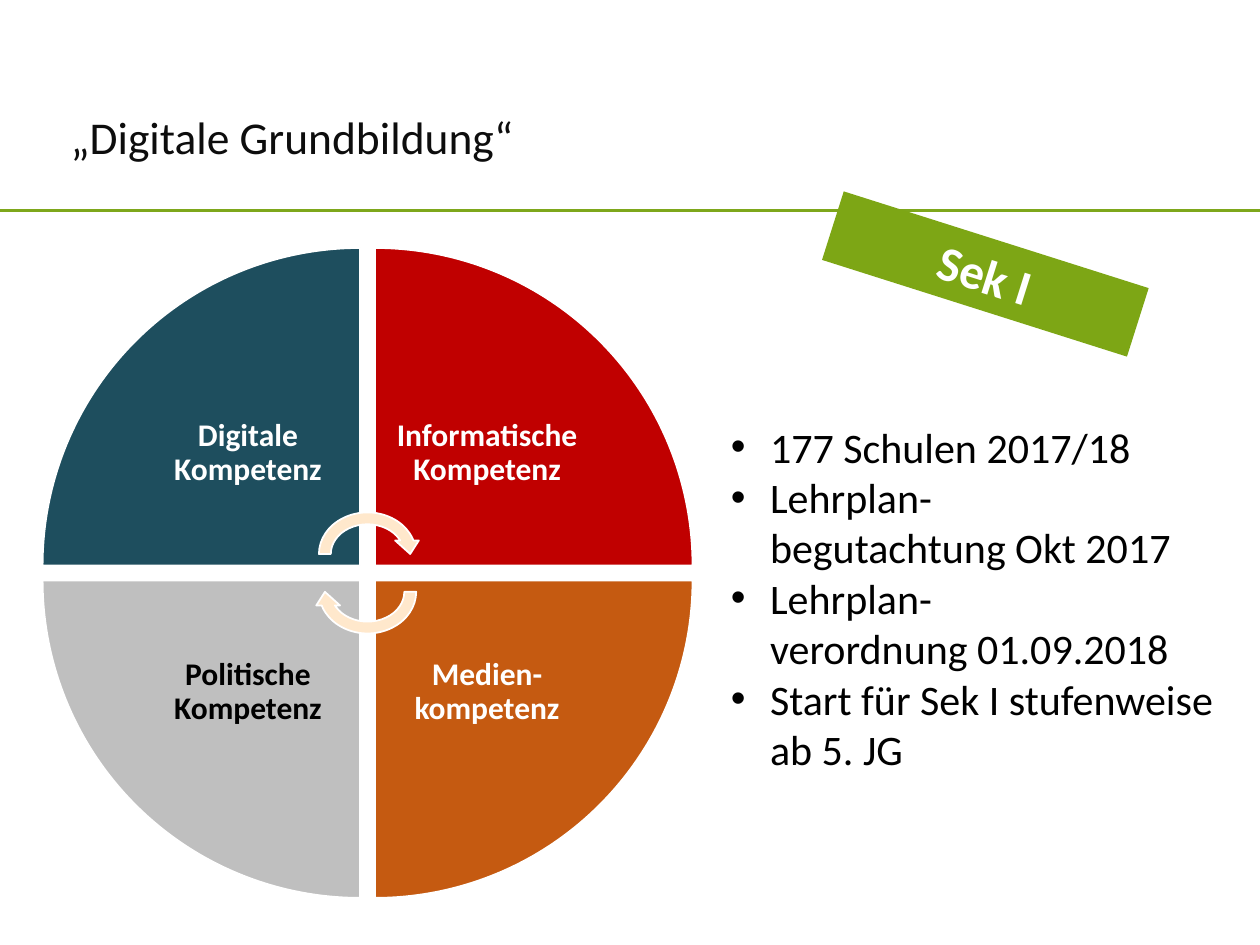
from lxml.etree import SubElement
from pptx import Presentation
from pptx.dml.color import RGBColor
from pptx.enum.shapes import MSO_CONNECTOR, MSO_SHAPE
from pptx.enum.text import MSO_ANCHOR, MSO_AUTO_SIZE, PP_ALIGN
from pptx.oxml.ns import qn
from pptx.util import Cm, Pt

FONT = "Calibri"
WHITE = RGBColor(0xFF, 0xFF, 0xFF)
BLACK = RGBColor(0x00, 0x00, 0x00)
TITLE_INK = RGBColor(0x0D, 0x0D, 0x0D)
RULE_GREEN = RGBColor(0x7E, 0xA7, 0x1B)
BADGE_GREEN = RGBColor(0x7D, 0xA6, 0x15)
PETROL = RGBColor(0x1E, 0x4E, 0x5E)
RED = RGBColor(0xC0, 0x00, 0x00)
ORANGE = RGBColor(0xC5, 0x5A, 0x11)
GREY = RGBColor(0xBF, 0xBF, 0xBF)
CREAM = RGBColor(0xFF, 0xE8, 0xCC)

# Content
TITLE = "„Digitale Grundbildung“"
BADGE = "Sek I"
BULLETS = [
    "177 Schulen 2017/18",
    "Lehrplan-\vbegutachtung Okt 2017",
    "Lehrplan-\vverordnung 01.09.2018",
    "Start für Sek I stufenweise ab 5. JG",
]
# Clockwise from top left: label, column, row, fill, text colour
COMPETENCES = [
    ("Digitale Kompetenz", 0, 0, PETROL, WHITE),
    ("Informatische Kompetenz", 1, 0, RED, WHITE),
    ("Medien-kompetenz", 1, 1, ORANGE, WHITE),
    ("Politische Kompetenz", 0, 1, GREY, BLACK),
]

# Wheel geometry in cm
WHEEL_LEFT, WHEEL_TOP = 0.86, 5.0
WEDGE, PITCH, LABEL = 6.4, 6.7, 4.52
ARROW_WIDTH, ARROW_HEIGHT, ARROW_SHIFT = 2.2, 1.92, 0.38


def box(left, top, width, height):
    return Cm(left), Cm(top), Cm(width), Cm(height)


def place(shape, *position):
    shape.left, shape.top, shape.width, shape.height = box(*position)


def write(shape, *texts, size, color, bold=False, align=PP_ALIGN.LEFT,
          anchor=MSO_ANCHOR.TOP, spacing=1.0, inset=None, hanging=None):
    frame = shape.text_frame
    frame.word_wrap = True
    frame.auto_size = MSO_AUTO_SIZE.NONE
    frame.vertical_anchor = anchor
    if inset is not None:
        frame.margin_left = frame.margin_right = Cm(inset)
        frame.margin_top = frame.margin_bottom = Cm(inset)
    for index, text in enumerate(texts):
        paragraph = frame.add_paragraph() if index else frame.paragraphs[0]
        paragraph.text = text
        paragraph.alignment = align
        paragraph.line_spacing = spacing
        paragraph.space_before = Pt(0)
        if hanging is not None:
            properties = paragraph._p.get_or_add_pPr()
            properties.set("marL", str(Cm(hanging)))
            properties.set("indent", str(-Cm(hanging)))
        for run in paragraph.runs:
            run.font.name = FONT
            run.font.size = Pt(size)
            run.font.bold = bold
            run.font.color.rgb = color


def add_figure(slide, kind, *position, fill, line=None, rotation=0):
    shape = slide.shapes.add_shape(kind, *box(*position))
    shape.shadow.inherit = False
    shape.rotation = rotation
    shape.fill.solid()
    shape.fill.fore_color.rgb = fill
    if line is None:
        shape.line.fill.background()
    else:
        shape.line.color.rgb = line
        shape.line.width = Pt(1)
    return shape


def add_wheel(slide):
    for turn, (label, column, row, fill, ink) in enumerate(COMPETENCES):
        left = WHEEL_LEFT + column * PITCH
        top = WHEEL_TOP + row * PITCH
        add_figure(slide, MSO_SHAPE.PIE_WEDGE, left, top, WEDGE, WEDGE,
                   fill=fill, line=WHITE, rotation=90 * turn)
        # Labels sit in the corner nearest the hub
        label_left = left + (1 - column) * (WEDGE - LABEL)
        label_top = top + (1 - row) * (WEDGE - LABEL)
        text_box = slide.shapes.add_textbox(*box(label_left, label_top, LABEL, LABEL))
        write(text_box, label, size=18, color=ink, bold=True, align=PP_ALIGN.CENTER,
              anchor=MSO_ANCHOR.MIDDLE, spacing=0.9, inset=0.36)

    # Circling arrows around the hub
    hub_x = WHEEL_LEFT + (PITCH + WEDGE) / 2
    hub_y = WHEEL_TOP + (PITCH + WEDGE) / 2
    for direction, rotation in ((-1, 0), (1, 180)):
        add_figure(slide, MSO_SHAPE.CIRCULAR_ARROW, hub_x - ARROW_WIDTH / 2,
                   hub_y + direction * ARROW_SHIFT - ARROW_HEIGHT / 2,
                   ARROW_WIDTH, ARROW_HEIGHT,
                   fill=CREAM, line=WHITE, rotation=rotation)


def main():
    presentation = Presentation()
    presentation.slide_width, presentation.slide_height = Cm(25.4), Cm(19.05)
    slide = presentation.slides.add_slide(presentation.slide_layouts[1])

    # Title and rule
    title, body = slide.placeholders
    place(title, 1.17, 1.78, 23.37, 2.06)
    write(title, TITLE, size=26, color=TITLE_INK, anchor=MSO_ANCHOR.MIDDLE, spacing=0.9)
    rule = slide.shapes.add_connector(MSO_CONNECTOR.STRAIGHT, 0, Cm(4.24),
                                      presentation.slide_width, Cm(4.24))
    rule.line.color.rgb = RULE_GREEN
    rule.line.width = Pt(1.5)
    SubElement(rule._element.spPr, qn("a:effectLst"))

    # Tilted badge
    badge = add_figure(slide, MSO_SHAPE.RECTANGLE, 16.64, 4.8, 6.45, 1.45,
                       fill=BADGE_GREEN, rotation=17.6)
    write(badge, BADGE, size=28, color=WHITE, bold=True, align=PP_ALIGN.CENTER)

    add_wheel(slide)

    # Bullet list
    place(body, 14.48, 8.36, 10.24, 7.44)
    write(body, *BULLETS, size=24, color=BLACK, hanging=0.79)

    presentation.save("out.pptx")


if __name__ == "__main__":
    main()
